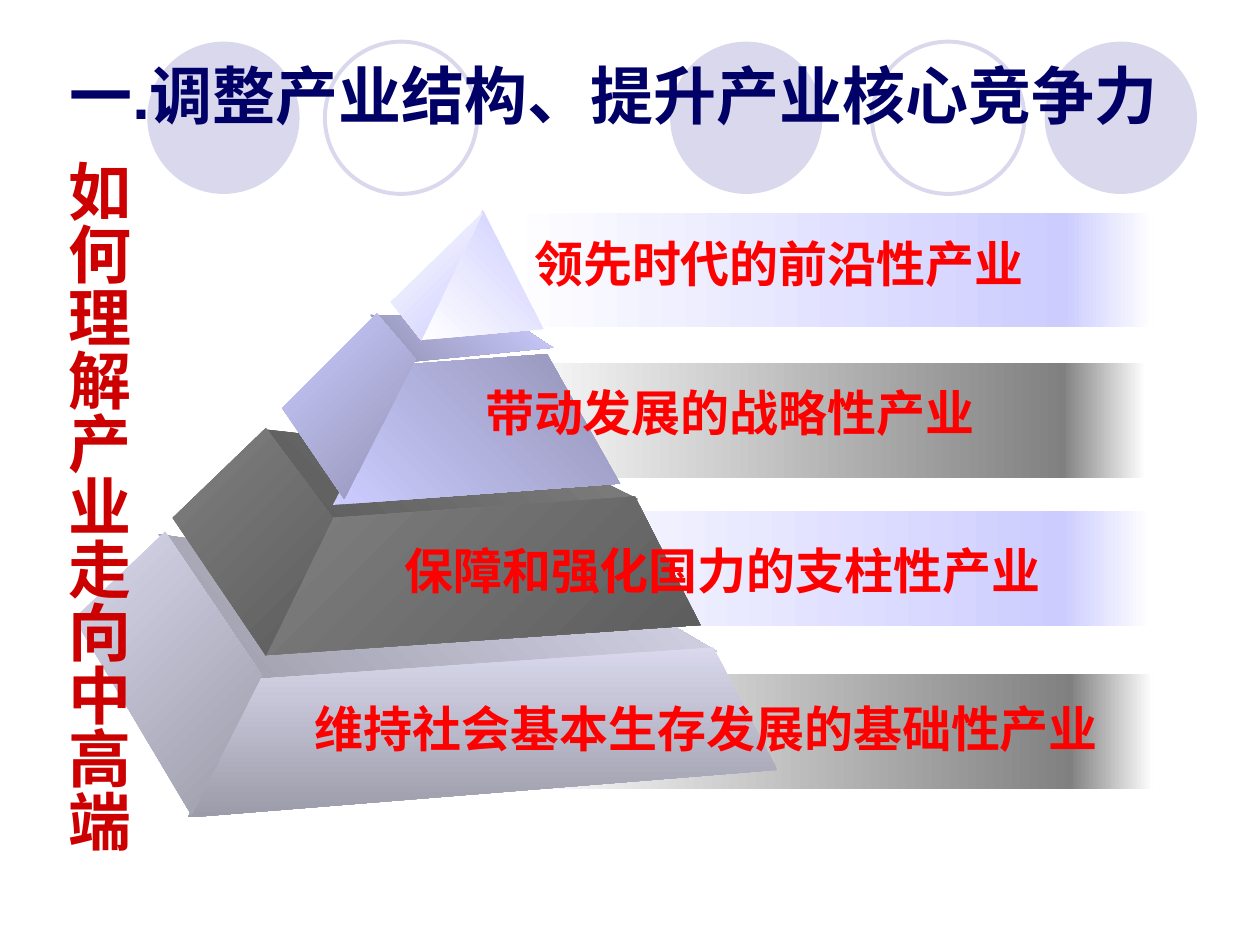
import pptx
import pptx.dml.color
import pptx.enum.lang
import pptx.enum.shapes
import pptx.enum.text
import pptx.oxml
import pptx.oxml.ns
import pptx.util

Cm = pptx.util.Cm
SHAPES = pptx.enum.shapes.MSO_SHAPE
ANCHORS = pptx.enum.text.MSO_ANCHOR

COLOURS = {
    "white": "FFFFFF", "lavender": "D9D8EC", "slate": "9B9BA9",
    "lilac": "CCCCFF", "dusk": "9292B6", "grey": "808080",
    "charcoal": "5C5C5C", "navy": "000066", "red": "FF0000",
    "crimson": "CC0000",
}
EAST_ASIAN_FONT = "Noto Sans CJK SC"

# Gradient directions, anticlockwise from pointing right
RIGHT, UP_RIGHT, DOWN, DOWN_RIGHT = 0, 45, 270, 315

# Pyramid faces from back to front: first colour, last colour, direction,
# corners in cm from the top left of the pyramid
FACES = [
    # Ledges
    ("dusk", "lilac", UP_RIGHT, [(6.83, 3.05), (9.65, 2.77), (8.76, 2.18), (5.97, 2.11)]),
    ("charcoal", "grey", UP_RIGHT, [(5.21, 6.25), (11.35, 5.82), (9.91, 5.11), (3.86, 4.42)]),
    ("slate", "lavender", UP_RIGHT, [(3.68, 9.47), (12.95, 8.89), (11.3, 7.92), (1.7, 6.53)]),
    # Front faces
    ("lavender", "slate", DOWN, [(2.29, 12.24), (14.17, 11.28), (12.88, 8.81), (3.66, 9.45)]),
    ("grey", "charcoal", DOWN_RIGHT, [(3.84, 8.97), (12.62, 8.36), (11.3, 5.77), (5.18, 6.2)]),
    ("lilac", "dusk", UP_RIGHT, [(5.21, 5.94), (11, 5.51), (9.53, 2.9), (6.73, 3.1)]),
    ("white", "lilac", UP_RIGHT, [(6.96, 2.62), (9.45, 2.39), (8.23, 0)]),
    # Side faces
    ("lavender", "slate", DOWN_RIGHT, [(2.36, 12.19), (3.78, 9.37), (1.83, 6.48), (0, 8.23)]),
    ("grey", "charcoal", DOWN_RIGHT, [(3.86, 8.97), (1.98, 6.2), (3.86, 4.39), (5.21, 6.2)]),
    ("white", "lilac", DOWN_RIGHT, [(6.99, 2.62), (6.38, 1.85), (8.23, 0.05)]),
    ("lilac", "dusk", DOWN_RIGHT, [(5.44, 5.82), (6.88, 3), (6.1, 2.08), (4.19, 3.99)]),
]

# Bands: left, top, colour, width of the fading end
BANDS = [
    (10.11, 7.32, "grey", 1.68),
    (10.11, 10.31, "lilac", 1.78),
    (10.26, 13.59, "grey", 1.68),
    (10.16, 4.29, "lilac", 1.78),
]

# Labels: left, top, width, text
LABELS = [
    (6.1, 14.12, 16.79, "维持社会基本生存发展的基础性产业"),
    (7.9, 10.92, 14, "保障和强化国力的支柱性产业"),
    (9.53, 7.75, 11.86, "带动发展的战略性产业"),
    (10.52, 4.75, 11.3, "领先时代的前沿性产业"),
]


def colour(name):
    return pptx.dml.color.RGBColor.from_string(COLOURS[name])


def paint_gradient(shape, first, last, direction):
    shape.shadow.inherit = False
    shape.line.fill.background()
    shape.fill.gradient()
    shape.fill.gradient_angle = direction
    for stop, name in zip(shape.fill.gradient_stops, (first, last)):
        stop.color.rgb = colour(name)


def add_words(page, left, top, width, height, words, size, ink,
              font="Arial", frame_format=None, line_spacing=None):
    box = page.shapes.add_textbox(Cm(left), Cm(top), Cm(width), Cm(height))
    frame = box.text_frame
    for name, value in {"word_wrap": True, **(frame_format or {})}.items():
        setattr(frame, name, value)
    para = frame.paragraphs[0]
    para.line_spacing = line_spacing
    span = para.add_run()
    span.text = words
    span_format = {
        "name": font, "size": pptx.util.Pt(size), "bold": True,
        "language_id": pptx.enum.lang.MSO_LANGUAGE_ID.SIMPLIFIED_CHINESE,
    }
    for name, value in span_format.items():
        setattr(span.font, name, value)
    span.font.color.rgb = colour(ink)
    # East Asian typeface
    face = pptx.oxml.parse_xml(
        f'<a:ea {pptx.oxml.ns.nsdecls("a")} typeface="{EAST_ASIAN_FONT}"/>')
    span.font._element.find(pptx.oxml.ns.qn("a:latin")).addnext(face)
    return box


def add_circles(page, left, top):
    diameter = 3.07
    for offset, solid in [(10.54, True), (18.09, True), (0, True),
                          (14.61, False), (3.58, False)]:
        circle = page.shapes.add_shape(SHAPES.OVAL, Cm(left + offset), Cm(top),
                                       Cm(diameter), Cm(diameter))
        circle.shadow.inherit = False
        if solid:
            circle.fill.solid()
            circle.fill.fore_color.rgb = colour("lavender")
            circle.line.fill.background()
        else:
            circle.fill.background()
            circle.line.color.rgb = colour("lavender")
            circle.line.width = pptx.util.Pt(2.25)


def add_band(page, left, top, tint, fade_width):
    body_width, fade_offset, height = 11.38, 11.3, 2.31
    for offset, width, first, last in [
        (fade_offset, fade_width, tint, "white"),
        (0, body_width, "white", tint),
    ]:
        bar = page.shapes.add_shape(SHAPES.RECTANGLE, Cm(left + offset), Cm(top),
                                    Cm(width), Cm(height))
        paint_gradient(bar, first, last, RIGHT)


def add_pyramid(page, left, top):
    for first, last, direction, corners in FACES:
        points = [(Cm(left + x), Cm(top + y)) for x, y in corners]
        builder = page.shapes.build_freeform(*points[0], scale=1.0)
        builder.add_line_segments(points[1:], close=True)
        paint_gradient(builder.convert_to_shape(), first, last, direction)


def add_title(page, left, top, width, height):
    add_words(page, left, top, width, height,
              "一.调整产业结构、提升产业核心竞争力", 36, "navy",
              frame_format={"margin_left": Cm(0.82)}, line_spacing=0.8)


def add_side_heading(page, left, top, width, height):
    box = add_words(page, left, top, width, height, "如何理解产业走向中高端",
                    36, "crimson", font=EAST_ASIAN_FONT)
    box.text_frame._txBody.bodyPr.set("vert", "eaVert")


def main():
    deck = pptx.Presentation()
    deck.slide_width, deck.slide_height = Cm(25.4), Cm(19.05)
    page = deck.slides.add_slide(deck.slide_layouts[6])

    add_circles(page, 2.97, 0.84)
    for band in BANDS:
        add_band(page, *band)
    add_pyramid(page, 1.5, 4.24)
    for left, top, width, words in LABELS:
        add_words(page, left, top, width, 1.12, words, 28, "red",
                  frame_format={"vertical_anchor": ANCHORS.MIDDLE})
    add_title(page, 0.58, 1.32, 23.9, 1.5)
    add_side_heading(page, 0.79, 2.97, 2.06, 14.68)

    deck.save("out.pptx")


if __name__ == "__main__":
    main()
